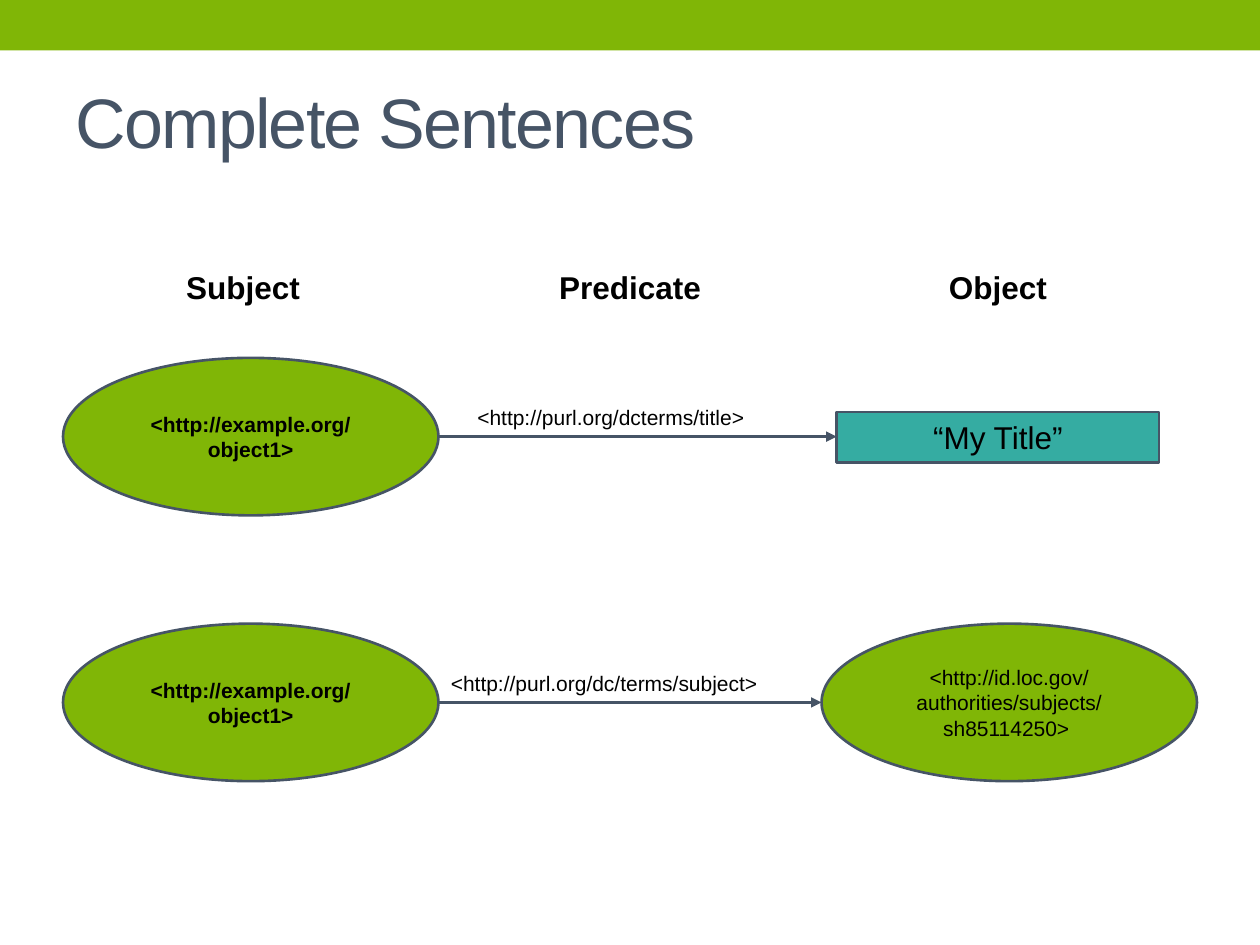
from lxml import etree
from pptx import Presentation
from pptx.dml.color import RGBColor
from pptx.enum import shapes, text
from pptx.oxml import ns
from pptx.util import Inches, Pt

COLORS = {"green": "80B606", "teal": "35ACA2", "slate": "465466", "black": "000000"}
CENTER, LEFT = text.PP_ALIGN.CENTER, text.PP_ALIGN.LEFT
MIDDLE, TOP = text.MSO_ANCHOR.MIDDLE, text.MSO_ANCHOR.TOP
OVAL, RECT = shapes.MSO_SHAPE.OVAL, shapes.MSO_SHAPE.RECTANGLE


def write(sp, words, size=12, bold=False, color="black", align=CENTER, anchor=MIDDLE, inset=0.1):
    """Fill a shape with one formatted paragraph and return its run."""
    tf = sp.text_frame
    tf.word_wrap = True
    tf.auto_size = text.MSO_AUTO_SIZE.NONE
    tf.vertical_anchor = anchor
    tf.margin_left = tf.margin_right = tf.margin_top = tf.margin_bottom = Inches(inset)
    p = tf.paragraphs[0]
    p.alignment = align
    r = p.add_run()
    r.text = words
    r.font.name, r.font.size, r.font.bold = "Arial", Pt(size), bold
    r.font.color.rgb = RGBColor.from_string(COLORS[color])
    return r


def add_box(s, kind, box, fill, outlined=True):
    sp = s.shapes.add_shape(kind, *map(Inches, box))
    sp.shadow.inherit = False
    sp.fill.solid()
    sp.fill.fore_color.rgb = RGBColor.from_string(COLORS[fill])
    if outlined:
        sp.line.color.rgb = RGBColor.from_string(COLORS["slate"])
        sp.line.width = Pt(1.5)
    else:
        sp.line.fill.background()
    return sp


prs = Presentation()
prs.slide_width, prs.slide_height = Inches(10), Inches(7.5)
s = prs.slides.add_slide(prs.slide_layouts[5])

add_box(s, RECT, (0, 0, 10, 0.4), "green", outlined=False)

title = s.shapes.title
title.left, title.top, title.width, title.height = map(Inches, (0.5, 0.42, 9, 1.08))
r = write(title, "Complete Sentences", size=40, color="slate", align=LEFT)
r.font._element.set("spc", "-100")

# Column headings
for left, heading in ((0.38, "Subject"), (3.45, "Predicate"), (6.37, "Object")):
    sp = s.shapes.add_textbox(Inches(left), Inches(2.03), Inches(3.1), Inches(0.81))
    write(sp, heading, size=18, bold=True, anchor=TOP)

# One subject, predicate and object per row
oval_left, oval_w, oval_h = 0.5, 2.98, 1.25
arrow_left = oval_left + oval_w
statements = [
    dict(top=2.84, predicate="<http://purl.org/dcterms/title>", label=(3.69, 2.74),
         object="“My Title”", kind=RECT, box=(6.64, 3.27, 2.56, 0.4), fill="teal", size=18),
    dict(top=4.95, predicate="<http://purl.org/dc/terms/subject>", label=(3.48, 3.04),
         object="<http://id.loc.gov/authorities/subjects/sh85114250> ", kind=OVAL,
         box=(6.52, 4.95, oval_w, oval_h), fill="green", size=12),
]
for row in statements:
    sp = add_box(s, OVAL, (oval_left, row["top"], oval_w, oval_h), "green")
    write(sp, "<http://example.org/object1>", bold=True)

    sp = add_box(s, row["kind"], row["box"], row["fill"])
    write(sp, row["object"], size=row["size"])

    middle = Inches(row["top"] + oval_h / 2)
    arrow = s.shapes.add_connector(shapes.MSO_CONNECTOR.STRAIGHT, Inches(arrow_left), middle,
                                   Inches(row["box"][0]), middle)
    arrow.line.color.rgb = RGBColor.from_string(COLORS["slate"])
    arrow.line.width = Pt(1.5)
    etree.SubElement(arrow.line._get_or_add_ln(), ns.qn("a:tailEnd"), type="triangle")
    etree.SubElement(arrow._element.spPr, ns.qn("a:effectLst"))

    left, width = row["label"]
    sp = s.shapes.add_textbox(Inches(left), Inches(row["top"] + 0.31), Inches(width), Inches(0.32))
    write(sp, row["predicate"], align=LEFT)

prs.save("out.pptx")
